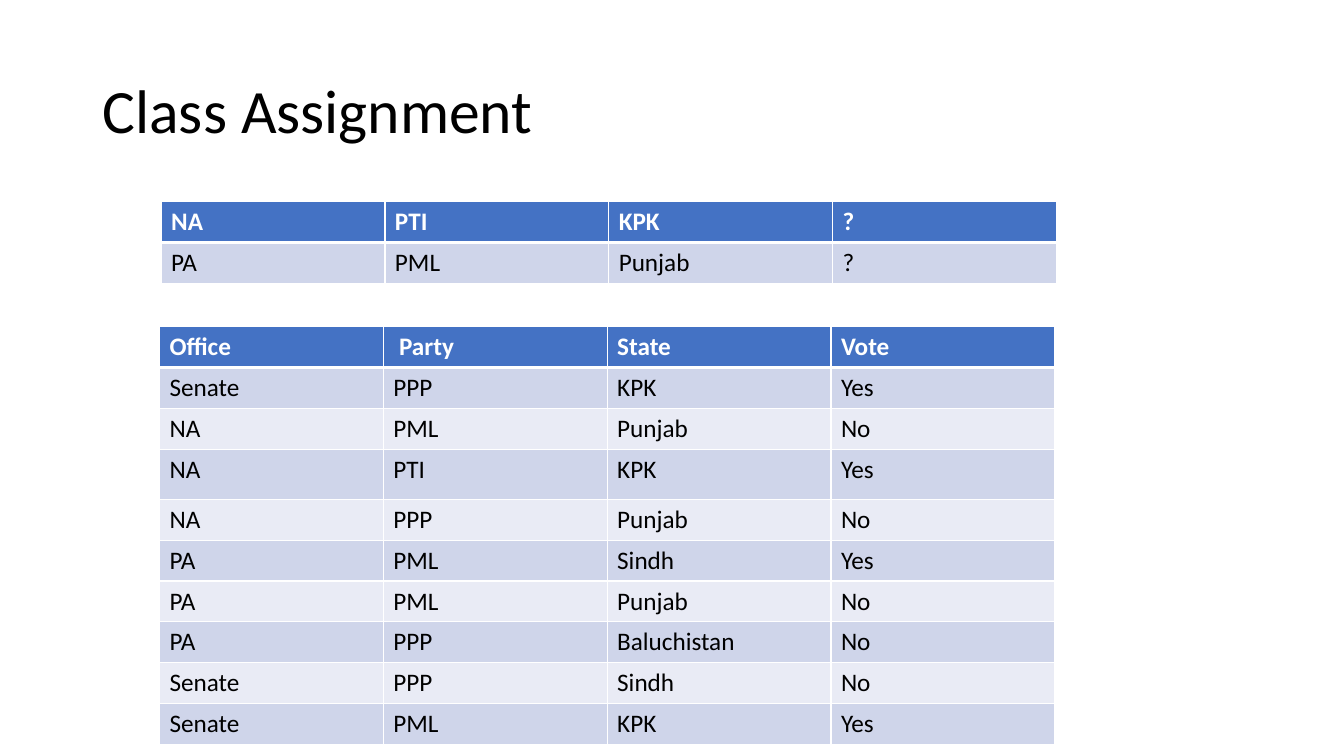
from lxml.etree import SubElement
from pptx import Presentation
from pptx.dml.color import RGBColor as RGB
from pptx.enum.text import MSO_ANCHOR as Anchor, PP_ALIGN as Align
from pptx.oxml.ns import qn
from pptx.util import Cm, Pt

COLORS = {
    "white": "FFFFFF",
    "black": "000000",
    "header": "4472C4",
    "odd": "CFD5EA",
    "even": "E9EBF5",
}

TITLE_ONLY = 5
COL_WIDTH = 5.64
ROW_HEIGHT = 1.03

QUERIES = [
    ["NA", "PTI", "KPK", "?"],
    ["PA", "PML", "Punjab", "?"],
]

VOTES = [
    ["Office", " Party", "State", "Vote"],
    ["Senate", "PPP", "KPK", "Yes"],
    ["NA", "PML", "Punjab", "No"],
    ["NA", "PTI", "KPK", "Yes"],
    ["NA", "PPP", "Punjab", "No"],
    ["PA", "PML", "Sindh", "Yes"],
    ["PA", "PML", "Punjab", "No"],
    ["PA", "PPP", "Baluchistan", "No"],
    ["Senate", "PPP", "Sindh", "No"],
    ["Senate", "PML", "KPK", "Yes"],
]


class SlideBuilder:
    font = "Calibri"

    def __init__(self, prs):
        self.slide = prs.slides.add_slide(prs.slide_layouts[TITLE_ONLY])

    def style(self, p, size, color, bold=False):
        for r in p.runs:
            r.font.name = self.font
            r.font.size = Pt(size)
            r.font.bold = bold
            r.font.color.rgb = RGB.from_string(COLORS[color])

    def title(self, text, left, top, width, height):
        sp = self.slide.shapes.title
        sp.left, sp.top, sp.width, sp.height = map(Cm, (left, top, width, height))
        tf = sp.text_frame
        tf.text = text
        tf.vertical_anchor = Anchor.MIDDLE
        p = tf.paragraphs[0]
        p.alignment = Align.LEFT
        p.line_spacing = 0.9
        self.style(p, 44, "black")

    def borders(self, cell, row):
        """White rules, with a thick one between the header and the body."""
        tc_pr = cell._tc.get_or_add_tcPr()
        widths = {"L": 1, "R": 1, "T": 3 if row == 1 else 1, "B": 3 if row == 0 else 1}
        for side, width in widths.items():
            ln = SubElement(tc_pr, qn(f"a:ln{side}"), w=str(Pt(width)))
            fill = SubElement(ln, qn("a:solidFill"))
            SubElement(fill, qn("a:srgbClr"), val=COLORS["white"])

    def table(self, rows, left, top, tall_rows=None):
        """Add a banded table; tall_rows maps a row index to its height in cm."""
        heights = [(tall_rows or {}).get(i, ROW_HEIGHT) for i in range(len(rows))]
        n_cols = len(rows[0])
        table = self.slide.shapes.add_table(
            len(rows), n_cols, Cm(left), Cm(top),
            Cm(COL_WIDTH * n_cols), Cm(sum(heights))).table
        for col in table.columns:
            col.width = Cm(COL_WIDTH)
        for i, values in enumerate(rows):
            table.rows[i].height = Cm(heights[i])
            band = "header" if i == 0 else "odd" if i % 2 else "even"
            for j, value in enumerate(values):
                cell = table.cell(i, j)
                self.borders(cell, i)
                cell.fill.solid()
                cell.fill.fore_color.rgb = RGB.from_string(COLORS[band])
                cell.text_frame.text = value
                self.style(cell.text_frame.paragraphs[0], 18,
                           "black" if i else "white", bold=i == 0)


def main():
    prs = Presentation()
    prs.slide_width, prs.slide_height = Cm(33.87), Cm(19.05)
    slide = SlideBuilder(prs)
    slide.title("Class Assignment", 2.33, 1.01, 29.21, 3.68)
    slide.table(VOTES, 4.02, 8.23, tall_rows={3: 1.26})
    slide.table(QUERIES, 4.06, 5.08)
    prs.save("out.pptx")


if __name__ == "__main__":
    main()
